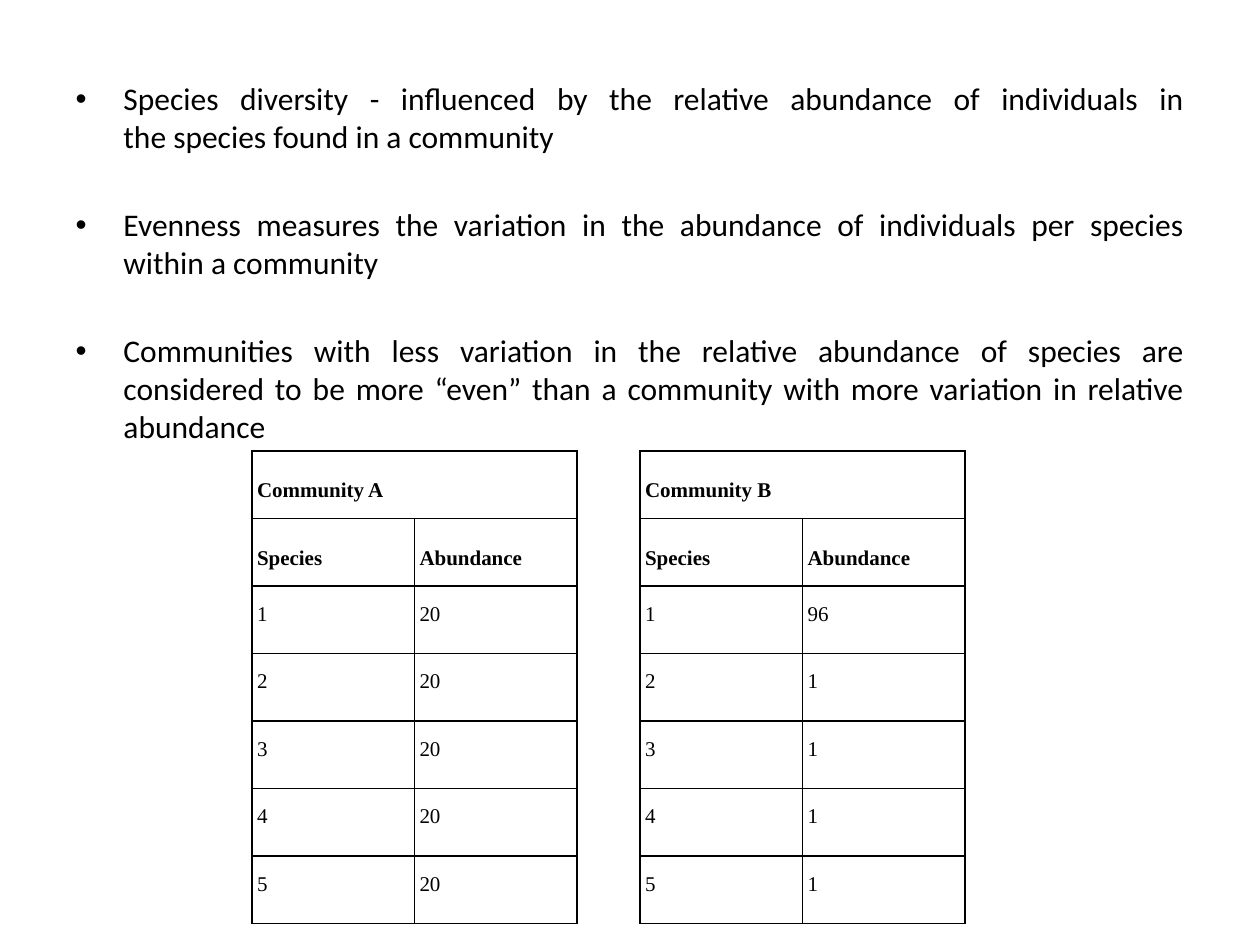
from dataclasses import dataclass

from lxml import etree
from pptx import Presentation
from pptx.dml.color import RGBColor
from pptx.enum import text
from pptx.oxml import ns
from pptx.util import Inches, Pt

BLACK = "000000"
TABLE_TOP, TABLE_WIDTH, TABLE_HEIGHT = 3.58, 2.58, 3.75
CELL_MARGIN = 0.04
BULLET_INDENT = 0.38

POINTS = [
    "Species diversity - influenced by the relative abundance of individuals in the\u00a0species found in a community",
    "Evenness measures the variation in the abundance of individuals per species within a community",
    "Communities with less variation in the relative abundance of species are considered to be more “even” "
    "than a community with more variation in relative abundance",
]


@dataclass
class Community:
    heading: str
    left: float
    abundances: list[int]


COMMUNITIES = [
    Community("Community A", 2, [20, 20, 20, 20, 20]),
    Community("Community B", 5.08, [96, 1, 1, 1, 1]),
]


def colour(value: str) -> RGBColor:
    return RGBColor.from_string(value)


def style_font(paragraph, name: str, size: float, bold: bool = False) -> None:
    paragraph.alignment = text.PP_ALIGN.JUSTIFY
    font = paragraph.font
    font.name, font.size, font.bold = name, Pt(size), bold
    font.color.rgb = colour(BLACK)


def write_points(body, points: list[str]) -> None:
    body.left, body.top = Inches(0.5), Inches(0.58)
    body.width, body.height = Inches(9), Inches(6.12)
    frame = body.text_frame
    frame.auto_size = text.MSO_AUTO_SIZE.NONE
    frame.text = "\n".join(points)
    for index, paragraph in enumerate(frame.paragraphs):
        style_font(paragraph, "Calibri", 18)
        paragraph.space_before = Pt(28.8 if index else 0)
        properties = paragraph._p.get_or_add_pPr()
        properties.set("marL", str(Inches(BULLET_INDENT)))
        properties.set("indent", str(-Inches(BULLET_INDENT)))


def add_borders(cell) -> None:
    properties = cell._tc.get_or_add_tcPr()
    for position, side in enumerate(("lnL", "lnR", "lnT", "lnB")):
        line = etree.Element(ns.qn(f"a:{side}"), w=str(Pt(1)))
        fill = etree.SubElement(line, ns.qn("a:solidFill"))
        etree.SubElement(fill, ns.qn("a:srgbClr"), val=BLACK)
        properties.insert(position, line)


def write_cell(cell, content: str, header: bool) -> None:
    cell.text = content
    cell.margin_left = cell.margin_right = Inches(CELL_MARGIN)
    cell.margin_top = cell.margin_bottom = Inches(CELL_MARGIN)
    cell.vertical_anchor = text.MSO_ANCHOR.MIDDLE if header else text.MSO_ANCHOR.TOP
    cell.fill.background()
    add_borders(cell)
    paragraph = cell.text_frame.paragraphs[0]
    style_font(paragraph, "Times New Roman", 12, header)
    paragraph.line_spacing = 1.5


def add_community(slide, community: Community) -> None:
    rows = [(community.heading, ""), ("Species", "Abundance")]
    rows += [(str(species), str(count)) for species, count in enumerate(community.abundances, 1)]
    table = slide.shapes.add_table(
        len(rows), 2, Inches(community.left), Inches(TABLE_TOP), Inches(TABLE_WIDTH), Inches(TABLE_HEIGHT)
    ).table
    table.first_row = table.horz_banding = False
    for row, values in enumerate(rows):
        for column, value in enumerate(values):
            write_cell(table.cell(row, column), value, header=row < 2)
    table.cell(0, 0).merge(table.cell(0, 1))


def main() -> None:
    deck = Presentation()
    deck.slide_width, deck.slide_height = Inches(10), Inches(7.5)
    slide = deck.slides.add_slide(deck.slide_layouts[1])
    title = slide.shapes.title._element
    title.getparent().remove(title)
    write_points(slide.placeholders[1], POINTS)
    for community in COMMUNITIES:
        add_community(slide, community)
    deck.save("out.pptx")


if __name__ == "__main__":
    main()
